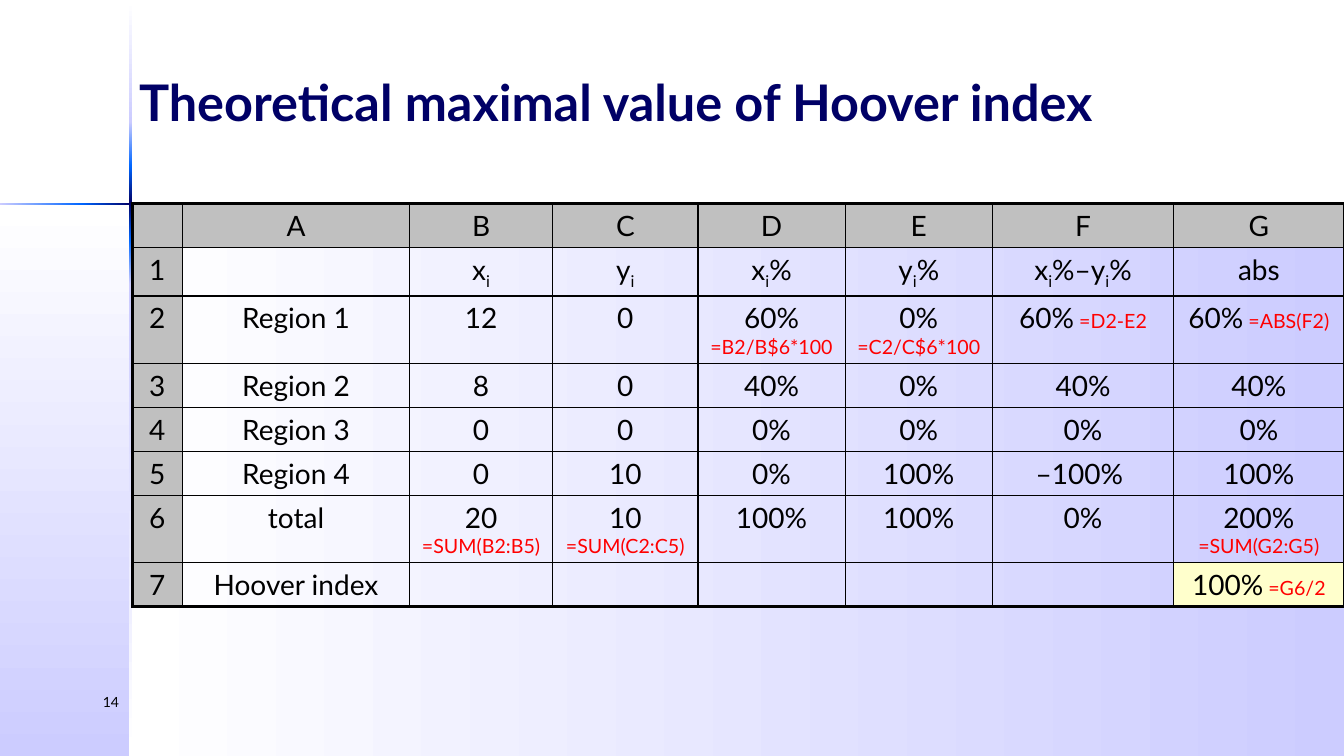
from dataclasses import dataclass
from itertools import pairwise

from lxml import etree
from pptx import Presentation
from pptx.dml.color import RGBColor
from pptx.enum.shapes import MSO_SHAPE
from pptx.enum.text import MSO_ANCHOR, MSO_AUTO_SIZE, PP_ALIGN
from pptx.oxml.ns import qn
from pptx.util import Cm, Pt

RECT = MSO_SHAPE.RECTANGLE
MIDDLE = MSO_ANCHOR.MIDDLE
FIXED = MSO_AUTO_SIZE.NONE
LEFT, CENTER, RIGHT = PP_ALIGN.LEFT, PP_ALIGN.CENTER, PP_ALIGN.RIGHT
TITLE_ONLY = 5

WIDE, HIGH = 33.87, 19.05
SIDE, TOP = 3.28, 5.13  # where the two rules of the backdrop cross
DOWN, ACROSS = 270, 0


@dataclass(frozen=True)
class Theme:
    font: str = "Lato"
    white: str = "FFFFFF"
    pale: str = "CCCCFF"
    blue: str = "0066FF"
    navy: str = "000066"
    ink: str = "000000"
    red: str = "FF0000"
    gray: str = "C0C0C0"
    cream: str = "FFFFCC"
    head: int = 36
    body: int = 20
    note: int = 14
    small: int = 10
    thin: float = 1
    thick: float = 2.25


THEME = Theme()

GRID = [
    ["", "A", "B", "C", "D", "E", "F", "G"],
    ["1", "", "x_i", "y_i", "x_i%", "y_i%", "x_i%–y_i%", "abs"],
    ["2", "Region 1", "12", "0", "60% =B2/B$6*100", "0% =C2/C$6*100",
     "60% =D2-E2", "60% =ABS(F2)"],
    ["3", "Region 2", "8", "0", "40%", "0%", "40%", "40%"],
    ["4", "Region 3", "0", "0", "0%", "0%", "0%", "0%"],
    ["5", "Region 4", "0", "10", "0%", "100%", "–100% ", "100%"],
    ["6", "total", "20 =SUM(B2:B5)", "10 =SUM(C2:C5)", "100%", "100%", "0%",
     "200% =SUM(G2:G5)"],
    ["7", "Hoover index", "", "", "", "", "", "100% =G6/2"],
]
WIDTHS = [1.27, 5.72, 3.61, 3.66, 3.71, 3.71, 4.57, 4.29]
LOW, SUBS, TALL = 1.11, 1.21, 1.69
HEIGHTS = [LOW, SUBS, TALL, LOW, LOW, LOW, TALL, LOW]


class Page:
    def __init__(self, deck, theme):
        self.theme = theme
        self.slide = deck.slides.add_slide(deck.slide_layouts[TITLE_ONLY])

    def style(self, run, size, color, bold=False):
        font = run.font
        font.name, font.size, font.bold = self.theme.font, Pt(size), bold
        font.color.rgb = RGBColor.from_string(color)

    def title(self, text, *box):
        shape = self.slide.shapes.title
        shape.left, shape.top, shape.width, shape.height = map(Cm, box)
        frame = shape.text_frame
        frame.text = text
        frame.auto_size, frame.vertical_anchor = FIXED, MIDDLE
        line = frame.paragraphs[0]
        line.alignment = LEFT
        self.style(line.runs[0], self.theme.head, self.theme.navy, True)

    def label(self, text, *box):
        frame = self.slide.shapes.add_textbox(*map(Cm, box)).text_frame
        frame.text, frame.word_wrap = text, True
        line = frame.paragraphs[0]
        line.alignment = RIGHT
        self.style(line.runs[0], self.theme.small, self.theme.ink)

    def blend(self, box, angle, colors):
        """Draw a rectangle that fades evenly through the colours."""
        shape = self.slide.shapes.add_shape(RECT, *map(Cm, box))
        shape.shadow.inherit = False
        shape.line.fill.background()
        shape.fill.gradient()
        shape.fill.gradient_angle = angle
        stops = shape._element.spPr.find(".//" + qn("a:gsLst"))
        for stop in list(stops):
            stops.remove(stop)
        for i, color in enumerate(colors):
            place = 100000 * i // (len(colors) - 1)
            stop = etree.SubElement(stops, qn("a:gs"), pos=str(place))
            etree.SubElement(stop, qn("a:srgbClr"), val=color)

    def backdrop(self):
        t = self.theme
        self.blend((SIDE, TOP, WIDE - SIDE, HIGH - TOP), ACROSS, (t.white, t.pale))
        self.blend((0, TOP, SIDE, HIGH - TOP), DOWN, (t.white, t.pale))
        rise, glow = (t.pale, t.blue), (t.blue, t.navy, t.blue)
        fall, fade = (t.blue, t.pale), (t.pale, t.white)
        flat = zip(pairwise((0, 2.06, 4.52, 5.99, WIDE)), (rise, glow, fall, fade))
        for (near, far), colors in flat:
            self.blend((near, 5.11, far - near, 0.05), ACROSS, colors)
        tall = zip(pairwise((0.03, 3.07, 4.19, 6.05, 7.16, HIGH)),
                   ((t.white, t.pale), rise, glow, fall, fade))
        for (near, far), colors in tall:
            self.blend((3.25, near, 0.08, far - near), DOWN, colors)

    def fill(self, cell, text):
        """Write a value with "_" before a subscript and an optional formula."""
        t = self.theme
        line = cell.text_frame.paragraphs[0]
        line.alignment = CENTER
        value, gap, rule = text.partition(" =")
        base, *tails = value.split("_")
        parts = [(base, False)]
        for tail in tails:
            parts += [(tail[0], True), (tail[1:], False)]
        for part, sub in parts:
            if part:
                run = line.add_run()
                run.text = part
                self.style(run, t.body, t.ink)
                if sub:
                    run.font._element.set("baseline", "-25000")
        if rule:
            run = line.add_run()
            run.text = gap + rule
            self.style(run, t.note, t.red)

    def border(self, cell, edges):
        """Line the sides of a cell; edges maps each side to thick or not."""
        t = self.theme
        props = cell._tc.get_or_add_tcPr()
        for side, heavy in edges.items():
            width = Pt(t.thick if heavy else t.thin)
            line = etree.SubElement(props, qn("a:ln" + side), w=str(width))
            solid = etree.SubElement(line, qn("a:solidFill"))
            etree.SubElement(solid, qn("a:srgbClr"), val=t.ink)

    def table(self, grid, widths, heights, left, top):
        t = self.theme
        rows, cols = len(grid), len(widths)
        table = self.slide.shapes.add_table(
            rows, cols, Cm(left), Cm(top), Cm(sum(widths)), Cm(sum(heights))).table
        table.first_row = table.horz_banding = False
        for col, width in zip(table.columns, widths):
            col.width = Cm(width)
        for row, height in zip(table.rows, heights):
            row.height = Cm(height)
        for r, texts in enumerate(grid):
            for c, text in enumerate(texts):
                cell = table.cell(r, c)
                self.fill(cell, text)
                first, last = c == 0, c == cols - 1
                self.border(cell, {"L": first, "R": last,
                                   "T": r == 0, "B": r == rows - 1})
                if r == 0 or first:
                    color = t.gray
                elif r == rows - 1 and last:
                    color = t.cream
                else:
                    cell.fill.background()
                    continue
                cell.fill.solid()
                cell.fill.fore_color.rgb = RGBColor.from_string(color)


def main():
    deck = Presentation()
    deck.slide_width, deck.slide_height = Cm(WIDE), Cm(HIGH)
    page = Page(deck, THEME)
    page.backdrop()
    page.label("14", 0, 17.35, 3.25, 1.27)
    page.title("Theoretical maximal value of Hoover index", 3.25, 0, 30.61, TOP)
    page.table(GRID, WIDTHS, HEIGHTS, 3.33, TOP)
    deck.save("out.pptx")


if __name__ == "__main__":
    main()
